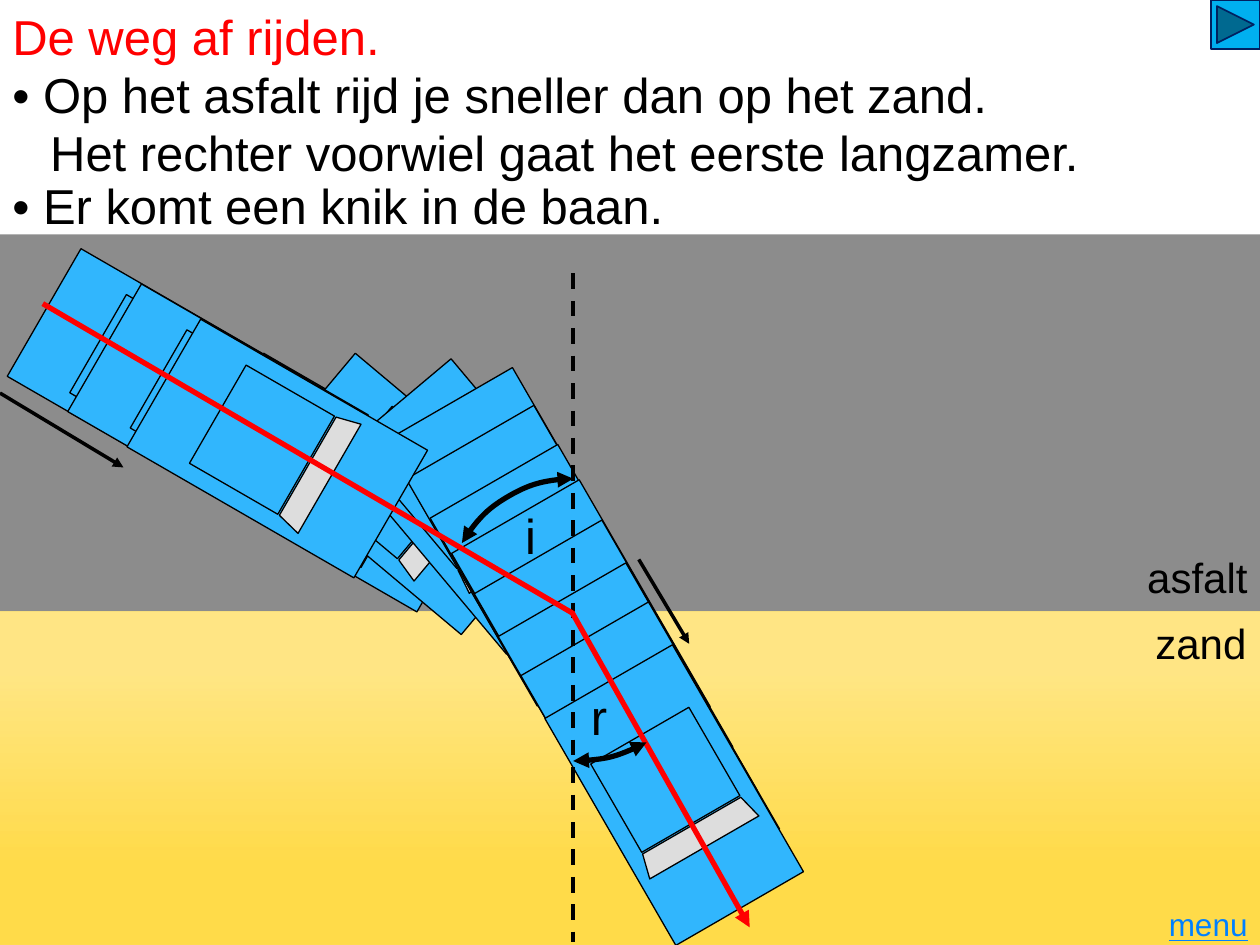
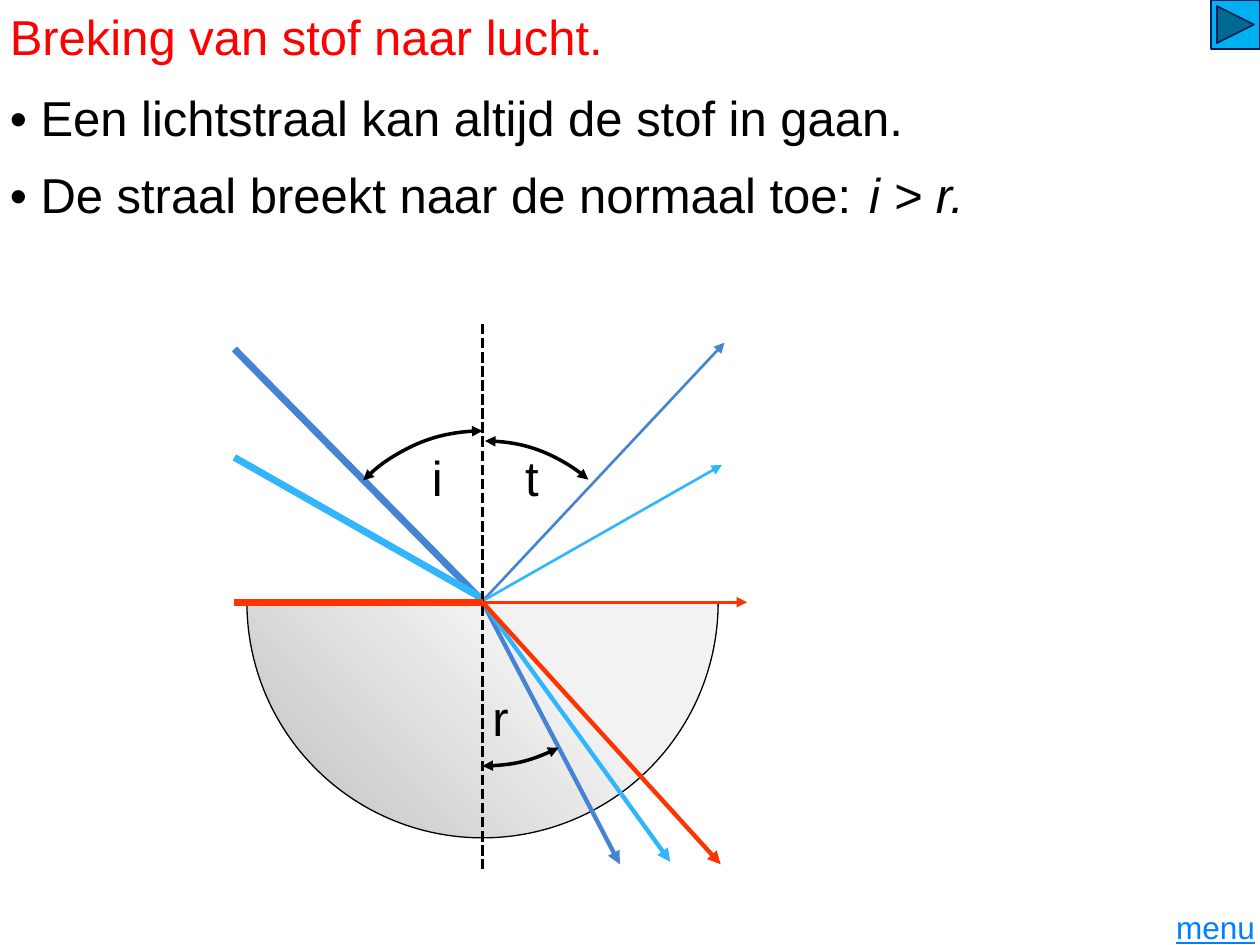
from math import cos, radians, sin

from lxml import etree
from pptx import Presentation
from pptx.dml.color import RGBColor
from pptx.enum.dml import MSO_LINE
from pptx.enum.shapes import MSO_CONNECTOR, MSO_SHAPE
from pptx.enum.text import MSO_ANCHOR, PP_ALIGN
from pptx.oxml.ns import qn
from pptx.util import Inches, Pt

BLACK = RGBColor(0x00, 0x00, 0x00)
RED = RGBColor(0xFF, 0x00, 0x00)
ASPHALT = RGBColor(0x80, 0x80, 0x80)
SAND = RGBColor(0xFF, 0xCC, 0x00)
SKY = RGBColor(0x31, 0xB6, 0xFD)
GLASS = RGBColor(0xDD, 0xDD, 0xDD)
BLUE = RGBColor(0x45, 0x84, 0xD3)
ORANGE = RGBColor(0xFF, 0x33, 0x00)
PALE = RGBColor(0xF2, 0xF2, 0xF2)
SILVER = RGBColor(0xBF, 0xBF, 0xBF)
LINK = RGBColor(0x00, 0x80, 0xFF)
BUTTON = RGBColor(0x00, 0xB0, 0xF0)
NAVY = RGBColor(0x00, 0x20, 0x60)
FONT = "Arial"


def add_text(s, text, x, y, w, h, size=28, color=BLACK, align=PP_ALIGN.LEFT,
             anchor=MSO_ANCHOR.TOP, italic=False, underline=False, inset=0.1):
    tf = s.shapes.add_textbox(Inches(x), Inches(y), Inches(w), Inches(h)).text_frame
    tf.word_wrap = True
    tf.vertical_anchor = anchor
    tf.margin_left = tf.margin_right = Inches(inset)
    p = tf.paragraphs[0]
    p.alignment = align
    r = p.add_run()
    r.text = text
    r.font.name = FONT
    r.font.size = Pt(size)
    r.font.color.rgb = color
    r.font.italic = italic
    r.font.underline = underline


def set_line(sp, color, width, ends=(), dash=None):
    sp.line.color.rgb = color
    sp.line.width = Pt(width)
    if dash:
        sp.line.dash_style = dash
    ln = sp._element.spPr.find(qn("a:ln"))
    for end in ends:
        etree.SubElement(ln, qn(f"a:{end}")).set("type", "triangle")
    etree.SubElement(sp._element.spPr, qn("a:effectLst"))


prs = Presentation()
prs.slide_width = Inches(10)
prs.slide_height = Inches(7.5)
blank = prs.slide_layouts[6]
road, light = [prs.slides.add_slide(blank) for _ in range(2)]

grounds = []
for y, h in [(1.86, 2.99), (4.85, 2.65)]:
    sp = road.shapes.add_shape(MSO_SHAPE.RECTANGLE, 0, Inches(y), Inches(10), Inches(h))
    sp.line.fill.background()
    sp.shadow.inherit = False
    grounds.append(sp)
asphalt, sand = grounds
asphalt.fill.solid()
asphalt.fill.fore_color.rgb = ASPHALT
sand.fill.gradient()
sand.fill.gradient_angle = 270
for stop, position in zip(sand.fill.gradient_stops, (0.19, 0.76)):
    stop.color.rgb = SAND
    stop.position = position
for sp, alphas in [(asphalt, [90]), (sand, [48, 71])]:
    for clr, alpha in zip(sp._element.spPr.iter(qn("a:srgbClr")), alphas):
        etree.SubElement(clr, qn("a:alpha")).set("val", str(alpha * 1000))

add_text(road, "asfalt", 8.33, 4.33, 1.67, 0.5, size=24, align=PP_ALIGN.RIGHT)
add_text(road, "zand", 8.49, 4.85, 1.5, 0.5, size=24, align=PP_ALIGN.RIGHT)

car_centres = [
    (2.7, 3.83, 120), (3.24, 3.92, 130), (3.8, 4.02, 140), (4.08, 4.11, 150),
    (4.25, 4.41, 150), (4.44, 4.72, 150), (4.61, 5.0, 150), (4.79, 5.32, 150),
    (4.98, 5.66, 150), (5.16, 5.97, 150), (5.35, 6.31, 150),
    (1.25, 3.0, 120), (1.73, 3.28, 120), (2.2, 3.56, 120),
]
car_parts = [
    (MSO_SHAPE.RECTANGLE, 1.17, 2.08, 0, 0, SKY),
    (MSO_SHAPE.TRAPEZOID, 1, 0.2, -0.38, 180, GLASS),
    (MSO_SHAPE.RECTANGLE, 0.9, 0.81, 0.14, 0, SKY),
]
for cx, cy, angle in car_centres:
    for kind, w, h, offset, turn, color in car_parts:
        x = cx - offset * sin(radians(angle)) - w / 2
        y = cy + offset * cos(radians(angle)) - h / 2
        sp = road.shapes.add_shape(kind, Inches(x), Inches(y), Inches(w), Inches(h))
        sp.rotation = angle + turn
        sp.fill.solid()
        sp.fill.fore_color.rgb = color
        set_line(sp, BLACK, 0.75)

half_disc = light.shapes.add_shape(MSO_SHAPE.ARC, Inches(1.96), Inches(2.91),
                                   Inches(3.74), Inches(3.74))
half_disc.adjustments[0] = 0
half_disc.adjustments[1] = 180 * 0.6
half_disc.fill.gradient()
half_disc.fill.gradient_angle = 225
for stop, color, position in zip(half_disc.fill.gradient_stops, (PALE, SILVER), (0.5, 1)):
    stop.color.rgb = color
    stop.position = position
set_line(half_disc, BLACK, 0)

TAIL = ["tailEnd"]
BOTH = ["headEnd", "tailEnd"]
lines = [
    (road, 4.55, 2.17, 4.55, 7.48, BLACK, 2.25, [], MSO_LINE.DASH),
    (road, 5.07, 4.44, 5.47, 5.11, BLACK, 2, TAIL, None),
    (road, 0, 3.12, 0.98, 3.71, BLACK, 2, TAIL, None),
    (road, 0.34, 2.41, 4.55, 4.87, RED, 3, [], None),
    (road, 4.54, 4.86, 5.95, 7.36, RED, 3, TAIL, None),
    (light, 1.96, 4.78, 5.71, 4.78, BLACK, 0.75, [], None),
    (light, 1.86, 2.77, 3.83, 4.77, BLUE, 4, [], None),
    (light, 3.83, 4.78, 4.92, 6.86, BLUE, 2.5, TAIL, None),
    (light, 3.83, 4.77, 5.75, 2.72, BLUE, 1.5, TAIL, None),
    (light, 1.86, 3.63, 3.83, 4.75, SKY, 4, [], None),
    (light, 3.83, 4.78, 5.32, 6.84, SKY, 2.5, TAIL, None),
    (light, 3.83, 4.77, 5.73, 3.69, SKY, 1.5, TAIL, None),
    (light, 3.83, 2.57, 3.83, 6.9, BLACK, 2, [], MSO_LINE.SQUARE_DOT),
    (light, 1.86, 4.78, 3.83, 4.78, ORANGE, 4, [], None),
    (light, 3.83, 4.78, 5.72, 6.86, ORANGE, 2.5, TAIL, None),
    (light, 3.83, 4.78, 5.93, 4.78, ORANGE, 0, TAIL, None),
]
for s, x1, y1, x2, y2, color, width, ends, dash in lines:
    sp = s.shapes.add_connector(MSO_CONNECTOR.STRAIGHT, Inches(x1), Inches(y1),
                                Inches(x2), Inches(y2))
    set_line(sp, color, width, ends, dash)

angle_marks = [
    (road, "i", 4.07, 3.96, 4.55, 4.82, 1.02, 210, 270, 3),
    (road, "r", 4.59, 5.4, 4.55, 4.82, 1.22, 61.5, 90, 3),
    (light, "i", 3.33, 3.5, 3.83, 4.76, 1.34, 225, 270, 2),
    (light, "r", 3.81, 5.41, 3.83, 4.75, 1.33, 63, 90, 2),
    (light, "t", 4.07, 3.5, 3.85, 4.75, 1.25, 270, 311, 2),
]
for s, label, x, y, cx, cy, radius, start, end, width in angle_marks:
    sp = s.shapes.add_shape(MSO_SHAPE.ARC, Inches(cx - radius), Inches(cy - radius),
                            Inches(2 * radius), Inches(2 * radius))
    for i, degrees in enumerate((start, end)):
        sp.adjustments[i] = (degrees if degrees <= 180 else degrees) * 0.6
    sp.fill.background()
    set_line(sp, BLACK, width, BOTH)
    add_text(s, label, x, y, 0.75, 0.57)

add_text(road, "• Op het asfalt rijd je sneller dan op het zand.", 0, 0.46, 8.5, 0.57)
add_text(road, "Het rechter voorwiel gaat het eerste langzamer.", 0.3, 0.92, 9.69, 0.57)
add_text(road, "• Er komt een knik in de baan.", 0, 1.38, 8.17, 0.5, anchor=MSO_ANCHOR.MIDDLE)
add_text(light, "• Een lichtstraal kan altijd de stof in gaan.", -0.02, 0.68, 7.5, 0.5,
         anchor=MSO_ANCHOR.MIDDLE)
add_text(light, "• De straal breekt naar de normaal toe:", -0.02, 1.29, 7.34, 0.5,
         anchor=MSO_ANCHOR.MIDDLE)
add_text(light, "i > r.", 6.8, 1.29, 1.83, 0.5, italic=True, anchor=MSO_ANCHOR.MIDDLE)

for s, title, title_x, menu_y, menu_inset in [
    (road, "De weg af rijden.", 0, 7.19, 0.1),
    (light, "Breking van stof naar lucht.", -0.02, 7.21, 0.04),
]:
    add_text(s, title, title_x, 0, 8.5, 0.57, color=RED)
    add_text(s, "menu", 9.06, menu_y, 0.94, 0.29, size=18, color=LINK, underline=True,
             align=PP_ALIGN.RIGHT, anchor=MSO_ANCHOR.MIDDLE, inset=menu_inset)
    sp = s.shapes.add_shape(MSO_SHAPE.ACTION_BUTTON_FORWARD_OR_NEXT, Inches(9.61), 0,
                            Inches(0.39), Inches(0.39))
    sp.fill.solid()
    sp.fill.fore_color.rgb = BUTTON
    set_line(sp, NAVY, 1)

prs.save("out.pptx")
